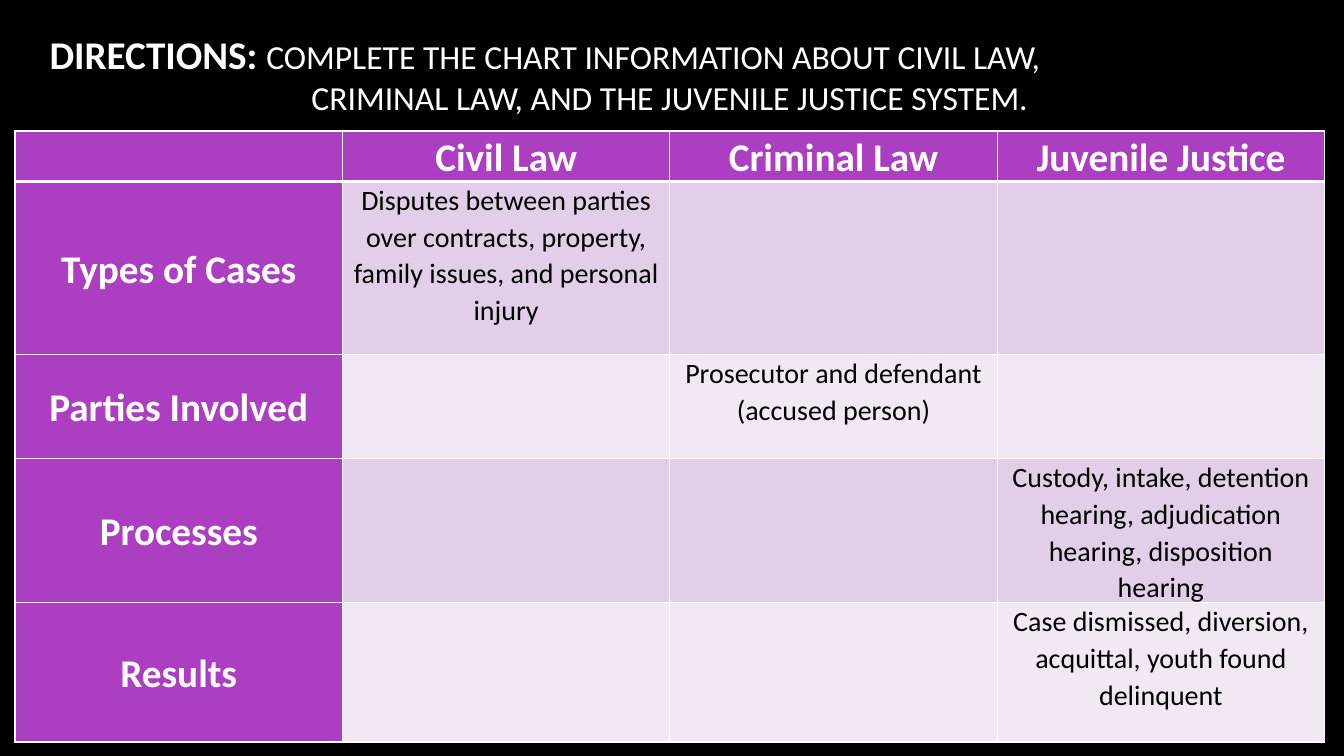
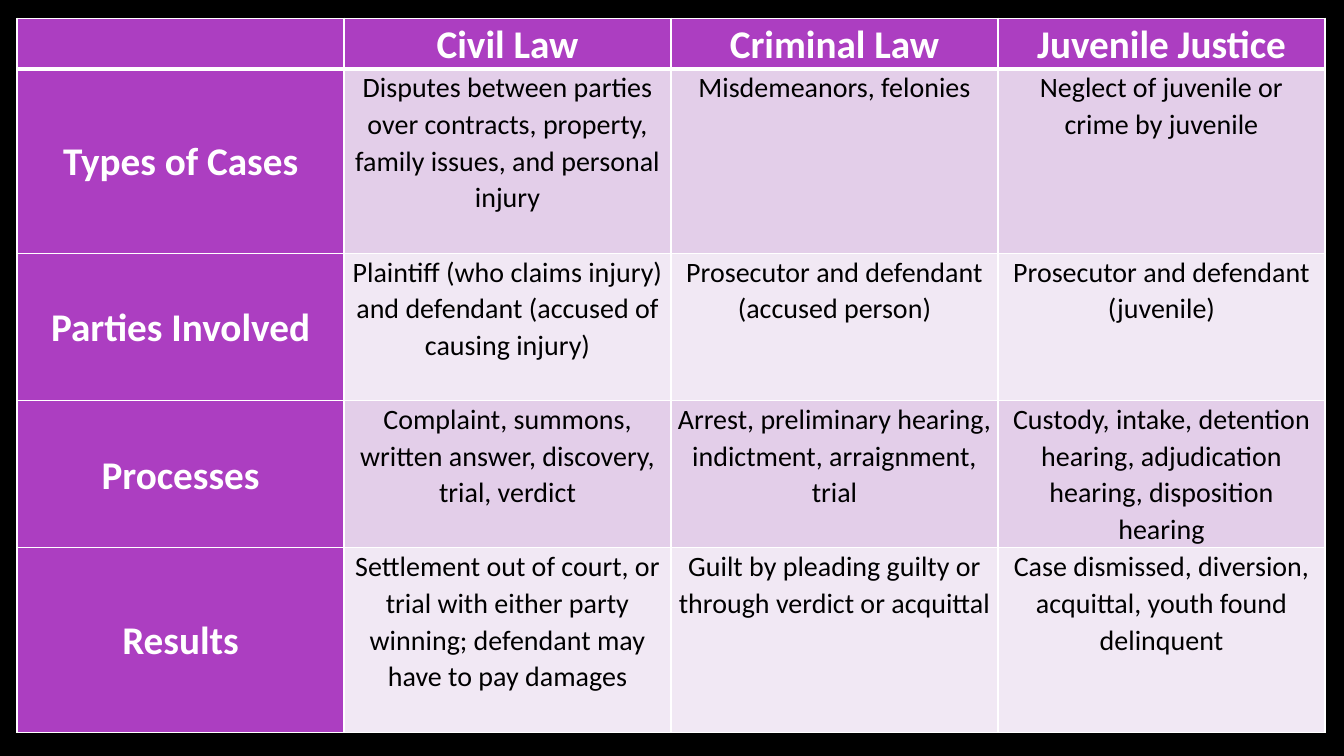
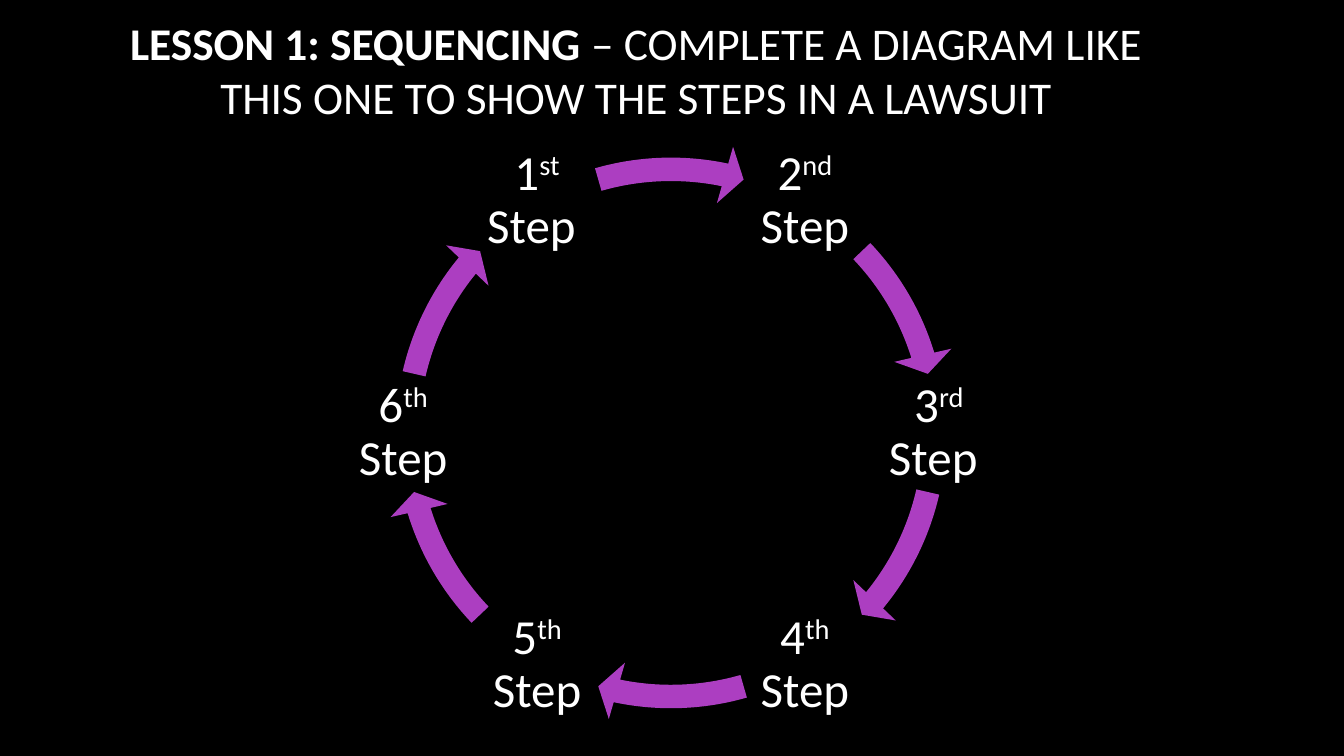
import math

from lxml import etree
from pptx import Presentation
from pptx.dml.color import RGBColor
from pptx.enum import shapes, text
from pptx.oxml import ns
from pptx.util import Cm, Pt


class Theme:
    font = "Calibri"
    black = RGBColor.from_string("000000")
    white = RGBColor.from_string("FFFFFF")
    purple = RGBColor.from_string("AC3EC1")
    bands = [RGBColor.from_string("E3CEE9"), RGBColor.from_string("F1E8F4")]
    directions, heading, answer, lesson, step = 24, 28, 20, 32.4, 35


def add_span(para, words, size, color=Theme.white, bold=False):
    span = para.add_run()
    span.text = words
    look = {"name": Theme.font, "size": Pt(size), "bold": bold}
    for key, value in look.items():
        setattr(span.font, key, value)
    span.font.color.rgb = color
    return span


def add_box(page, left, top, width, height, inset_x=0.25, inset_y=0.13):
    box = page.shapes.add_textbox(Cm(left), Cm(top), Cm(width), Cm(height))
    frame = box.text_frame
    settings = {
        "word_wrap": True,
        "vertical_anchor": text.MSO_ANCHOR.MIDDLE,
        "margin_left": Cm(inset_x), "margin_right": Cm(inset_x),
        "margin_top": Cm(inset_y), "margin_bottom": Cm(inset_y),
    }
    for key, value in settings.items():
        setattr(frame, key, value)
    frame.paragraphs[0].alignment = text.PP_ALIGN.CENTER
    return frame


# Deck with three black pages
deck = Presentation()
deck.slide_width, deck.slide_height = Cm(33.87), Cm(19.05)
pages = []
for _ in range(3):
    page = deck.slides.add_slide(deck.slide_layouts[6])
    page.background.fill.solid()
    page.background.fill.fore_color.rgb = Theme.black
    pages.append(page)
exercise_page, answer_page, sequence_page = pages

# Directions above the exercise
frame = add_box(exercise_page, 0.38, 0.41, 33, 2.9)
first_line = frame.paragraphs[0]
first_line.alignment = text.PP_ALIGN.LEFT
first_line._p.get_or_add_pPr().set("marL", str(Cm(0.62)))
add_span(first_line, "DIRECTIONS: ", Theme.heading, bold=True)
add_span(first_line, "COMPLETE THE CHART INFORMATION ABOUT CIVIL LAW,", Theme.directions)
second_line = frame.add_paragraph()
second_line.alignment = text.PP_ALIGN.CENTER
add_span(second_line, "CRIMINAL LAW, AND THE JUVENILE JUSTICE SYSTEM.", Theme.directions)

# Chart of the three kinds of law: a partly filled exercise, then all answers
chart_rows = [
    ["", "Civil Law", "Criminal Law", "Juvenile Justice"],
    ["Types of Cases",
     "Disputes between parties over contracts, property, family issues, and personal injury",
     "Misdemeanors, felonies",
     "Neglect of juvenile or crime by juvenile"],
    ["Parties Involved",
     "Plaintiff (who claims injury) and defendant (accused of causing injury)",
     "Prosecutor and defendant (accused person)",
     "Prosecutor and defendant (juvenile)"],
    ["Processes",
     "Complaint, summons, written answer, discovery, trial, verdict",
     "Arrest, preliminary hearing, indictment, arraignment, trial",
     "Custody, intake, detention hearing, adjudication hearing, disposition hearing"],
    ["Results",
     "Settlement out of court, or trial with either party winning; "
     "defendant may have to pay damages",
     "Guilt by pleading guilty or through verdict or acquittal",
     "Case dismissed, diversion, acquittal, youth found delinquent"],
]
every_answer = {(row, column) for row in range(1, 5) for column in range(1, 4)}
given_answers = {(1, 1), (2, 2), (3, 3), (4, 3)}
tables = [
    (exercise_page, 0.38, 3.3, 8.25, [1.17, 4.37, 2.62, 3.51, 3.51], given_answers),
    (answer_page, 0.43, 0.46, 8.24, [1.19, 4.65, 3.71, 3.71, 4.65], every_answer),
]
for page, left, top, column_width, heights, shown in tables:
    table = page.shapes.add_table(
        5, 4, Cm(left), Cm(top), Cm(4 * column_width), Cm(sum(heights))).table
    for column in table.columns:
        column.width = Cm(column_width)
    for row, height in enumerate(heights):
        table.rows[row].height = Cm(height)
        for column in range(4):
            cell = table.cell(row, column)
            is_heading = row == 0 or column == 0
            cell.fill.solid()
            cell.fill.fore_color.rgb = (
                Theme.purple if is_heading else Theme.bands[(row - 1) % 2])
            cell.margin_left = cell.margin_right = Cm(0.17)
            cell.margin_top = cell.margin_bottom = 0
            if row and column == 0:
                cell.vertical_anchor = text.MSO_ANCHOR.MIDDLE

            # Thin white grid with a thick rule under the header
            properties = cell._tc.get_or_add_tcPr()
            for place, side in enumerate("LRTB"):
                thick = (row, side) in {(0, "B"), (1, "T")}
                border = etree.Element(ns.qn(f"a:ln{side}"), w=str(Pt(3 if thick else 1)))
                fill = etree.SubElement(border, ns.qn("a:solidFill"))
                etree.SubElement(fill, ns.qn("a:srgbClr"), val=str(Theme.white))
                properties.insert(place, border)

            words = chart_rows[row][column]
            if words and (is_heading or (row, column) in shown):
                para = cell.text_frame.paragraphs[0]
                para.alignment = text.PP_ALIGN.CENTER
                para.line_spacing = 1.07
                if is_heading:
                    add_span(para, words, Theme.heading, bold=True)
                else:
                    add_span(para, words, Theme.answer, Theme.black)

# Title of the sequencing lesson
title = add_box(sequence_page, 1.96, 0.41, 28.14, 2.69).paragraphs[0]
add_span(title, "LESSON 1: SEQUENCING ", Theme.lesson, bold=True)
add_span(title, "– COMPLETE A DIAGRAM LIKE THIS ONE TO SHOW THE STEPS IN A LAWSUIT",
         Theme.lesson)

# Ring of six steps, each followed by an arc arrow
center_x, center_y, radius = 16.91, 10.91, 6.75
label_size, ring_size = 3.02, 14.76
arcs = [(253.99, 281.83), (316.4, 342.87), (12.96, 39.42)]
degree = 0.6  # adjustment units per degree
steps = [("st", " Step "), ("nd", " Step"), ("rd", " Step "),
         ("th", " Step"), ("th", " Step"), ("th", " Step")]
for index, (ordinal, word) in enumerate(steps):
    angle = math.radians(60 * index - 120)
    label = add_box(
        sequence_page,
        center_x + radius * math.cos(angle) - label_size / 2,
        center_y + radius * math.sin(angle) - label_size / 2,
        label_size, label_size, inset_x=0.13).paragraphs[0]
    label.line_spacing = 0.9
    add_span(label, str(index + 1), Theme.step)
    raised = add_span(label, ordinal, Theme.step)
    raised._r.get_or_add_rPr().set("baseline", "30000")
    add_span(label, word, Theme.step)

    arrow = sequence_page.shapes.add_shape(
        shapes.MSO_SHAPE.CIRCULAR_ARROW,
        Cm(center_x - ring_size / 2), Cm(center_y - ring_size / 2),
        Cm(ring_size), Cm(ring_size))
    half_turn = 180 * (index // 3)
    start, end = [(value + half_turn) % 360 for value in arcs[index % 3]]
    for place, value in enumerate(
            [0.04, 4.18 * degree, end * degree, start * degree, 0.05]):
        arrow.adjustments[place] = value
    arrow.shadow.inherit = False
    arrow.fill.solid()
    arrow.fill.fore_color.rgb = Theme.purple
    arrow.line.fill.background()

deck.save("out.pptx")
